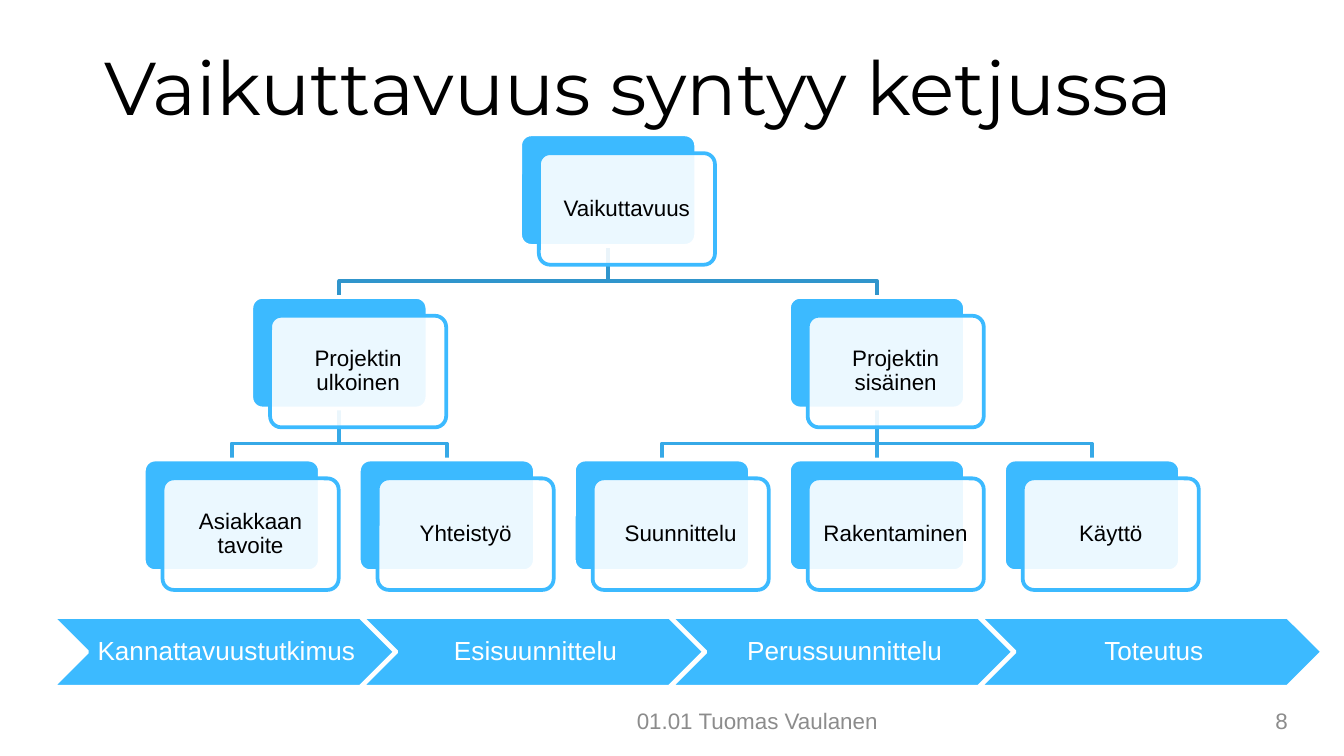
"""Build the slide about the chain that creates project impact."""
from lxml import etree
from pptx import Presentation
from pptx.dml.color import RGBColor
from pptx.enum.shapes import MSO_CONNECTOR, MSO_SHAPE
from pptx.enum.text import MSO_ANCHOR, PP_ALIGN
from pptx.oxml.ns import qn
from pptx.util import Inches, Pt

ROUNDED = MSO_SHAPE.ROUNDED_RECTANGLE
CHEVRON = MSO_SHAPE.CHEVRON
STRAIGHT = MSO_CONNECTOR.STRAIGHT
MIDDLE = MSO_ANCHOR.MIDDLE
LEFT, CENTER, RIGHT = PP_ALIGN.LEFT, PP_ALIGN.CENTER, PP_ALIGN.RIGHT

COLORS = {
    "accent": "3CBAFF",
    "upper_link": "3095CC",
    "lower_link": "36A9E7",
    "white": "FFFFFF",
    "black": "000000",
    "footer": "8C8C8C",
}

CARD_W, CARD_H = 1.31, 0.83
CARD_OFFSET = 0.14
TREE_LEFT, TREE_TOP = 1.07, 1.0
COLUMN_STEP, ROW_STEP = 1.6, 1.21
BEND_DROP = 0.26
PHASE_LEFT, PHASE_STEP = 0.39, 2.3

TREE = ("Vaikuttavuus", [
    ("Projektin ulkoinen", ["Asiakkaan tavoite", "Yhteistyö"]),
    ("Projektin sisäinen", ["Suunnittelu", "Rakentaminen", "Käyttö"]),
])
PHASES = ["Kannattavuustutkimus", "Esisuunnittelu", "Perussuunnittelu", "Toteutus"]


def color(name):
    """Return the named palette colour."""
    return RGBColor.from_string(COLORS[name])


def write(shape, text, size, ink, align=CENTER, font="Arial", spacing=None):
    """Write one vertically centred paragraph into a shape."""
    frame = shape.text_frame
    frame.word_wrap = True
    frame.vertical_anchor = MIDDLE
    paragraph = frame.paragraphs[0]
    paragraph.alignment = align
    paragraph.line_spacing = spacing
    run = paragraph.add_run()
    run.text = text
    run.font.size = Pt(size)
    run.font.name = font
    run.font.color.rgb = color(ink)


def set_insets(shape, left, others):
    """Set the text margins of a shape in inches."""
    frame = shape.text_frame
    frame.margin_left = Inches(left)
    frame.margin_top = frame.margin_right = frame.margin_bottom = Inches(others)


def add_label(slide, box, text, size, ink, align, font="Arial"):
    """Add a plain text box."""
    label = slide.shapes.add_textbox(*map(Inches, box))
    write(label, text, size, ink, align, font)


def add_block(slide, kind, box, fill, outline):
    """Add a filled and outlined preset shape."""
    block = slide.shapes.add_shape(kind, *map(Inches, box))
    block.shadow.inherit = False
    block.fill.solid()
    block.fill.fore_color.rgb = color(fill)
    block.line.color.rgb = color(outline)
    block.line.width = Pt(2)
    return block


def add_card(slide, left, top, text):
    """Add a solid card with a translucent text card over it; return the solid one."""
    back = add_block(slide, ROUNDED, (left, top, CARD_W, CARD_H), "accent", "white")
    front_box = (left + CARD_OFFSET, top + CARD_OFFSET, CARD_W, CARD_H)
    front = add_block(slide, ROUNDED, front_box, "white", "accent")
    back.adjustments[0] = front.adjustments[0] = 0.1
    tint = front.fill._xPr.find(qn("a:solidFill"))[0]
    etree.SubElement(tint, qn("a:alpha"), val="90000")
    set_insets(front, 0.05, 0.05)
    write(front, text, 12, "black", spacing=0.9)
    return back


def add_straight_link(slide, parent, child):
    """Join a parent card to the child directly below it."""
    link = slide.shapes.add_connector(STRAIGHT, 0, 0, 0, 0)
    link.begin_connect(parent, 2)
    link.end_connect(child, 0)
    etree.SubElement(link._element.spPr, qn("a:effectLst"))
    return link


def add_bent_link(slide, parent, child):
    """Draw a down, across and down line from a parent card to a child."""
    start_x = parent.left + parent.width // 2
    start_y = parent.top + parent.height
    end_x = child.left + child.width // 2
    bend_y = start_y + Inches(BEND_DROP)
    outline = slide.shapes.build_freeform(start_x, start_y)
    outline.add_line_segments(
        [(start_x, bend_y), (end_x, bend_y), (end_x, child.top)], close=False)
    link = outline.convert_to_shape()
    link.shadow.inherit = False
    link.fill.background()
    return link


def add_link(slide, parent, child, ink):
    """Link two cards with a line that lies behind all cards."""
    aligned = abs(parent.left - child.left) < Inches(0.01)
    draw = add_straight_link if aligned else add_bent_link
    link = draw(slide, parent, child)
    link.line.color.rgb = color(ink)
    link.line.width = Pt(2)
    slide.shapes._spTree.insert(2, link._element)


def add_tree(slide):
    """Add the three-level tree, each parent centred over its children."""
    root_text, branches = TREE
    column = 0
    branch_cards = []
    branch_lefts = []
    for branch_text, leaf_texts in branches:
        lefts = [TREE_LEFT + COLUMN_STEP * (column + i) for i in range(len(leaf_texts))]
        column += len(leaf_texts)
        branch_left = sum(lefts) / len(lefts)
        branch = add_card(slide, branch_left, TREE_TOP + ROW_STEP, branch_text)
        for left, leaf_text in zip(lefts, leaf_texts):
            leaf = add_card(slide, left, TREE_TOP + 2 * ROW_STEP, leaf_text)
            add_link(slide, branch, leaf, "lower_link")
        branch_cards.append(branch)
        branch_lefts.append(branch_left)
    root_left = sum(branch_lefts) / len(branch_lefts)
    root = add_card(slide, root_left, TREE_TOP, root_text)
    for branch in branch_cards:
        add_link(slide, root, branch, "upper_link")


def add_phases(slide):
    """Add the row of project phase chevrons."""
    for i, phase_text in enumerate(PHASES):
        box = (PHASE_LEFT + PHASE_STEP * i, 4.59, 2.55, 0.52)
        phase = add_block(slide, CHEVRON, box, "accent", "white")
        set_insets(phase, 0.06, 0.02)
        write(phase, phase_text, 14, "white", spacing=0.9)


def main():
    """Build and save the presentation."""
    deck = Presentation()
    deck.slide_width = Inches(10)
    deck.slide_height = Inches(10) * 9 // 16
    slide = deck.slides.add_slide(deck.slide_layouts[6])
    add_label(slide, (0.68, 0.17, 9.16, 0.94), "Vaikuttavuus syntyy ketjussa",
              40, "black", LEFT, "Montserrat")
    add_tree(slide)
    add_phases(slide)
    add_label(slide, (3.81, 5.21, 3.65, 0.3), "01.01 Tuomas Vaulanen", 12, "footer", CENTER)
    add_label(slide, (8.94, 5.21, 0.74, 0.3), "8", 12, "footer", RIGHT)
    deck.save("out.pptx")


if __name__ == "__main__":
    main()
